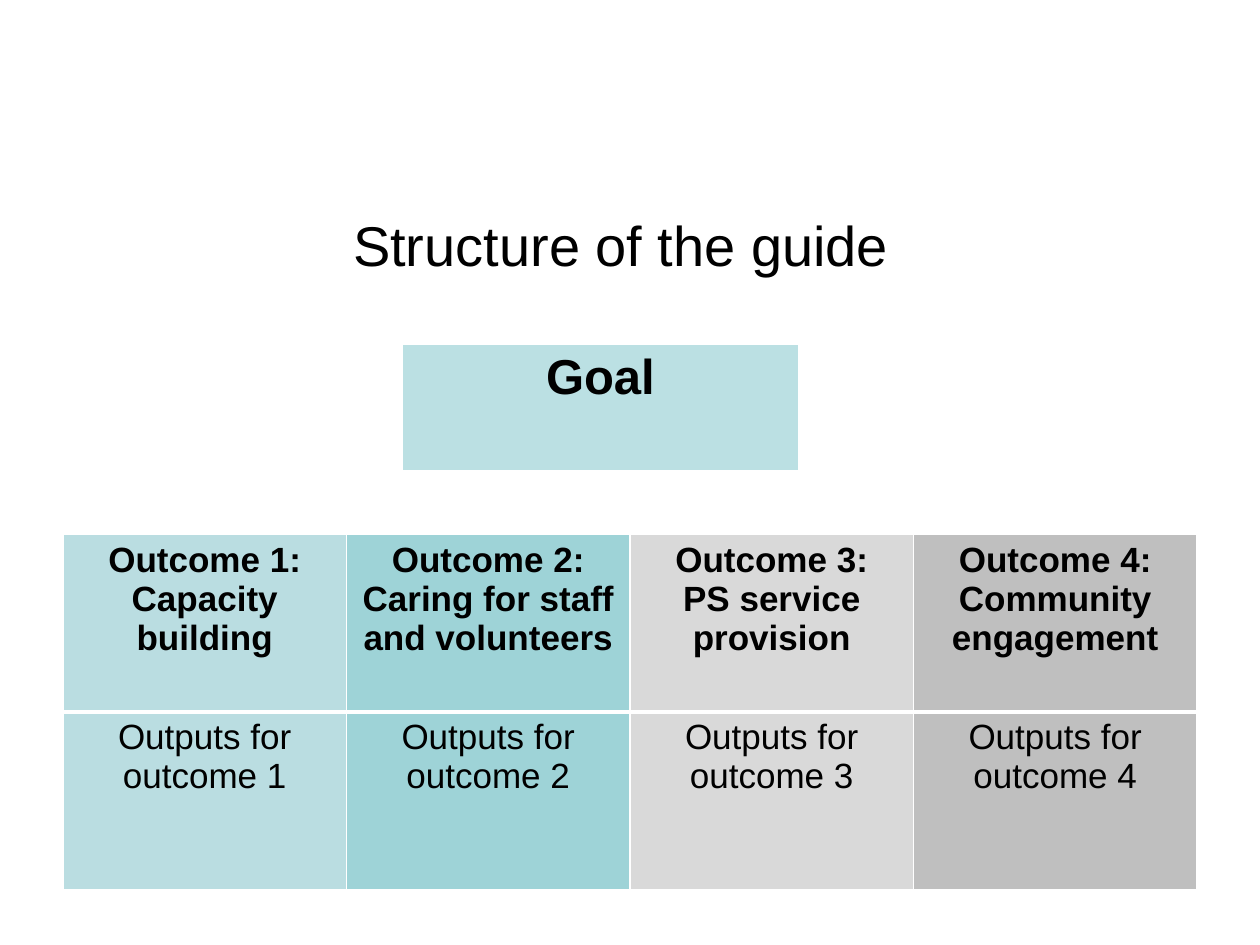
from lxml import etree
from pptx import Presentation
from pptx.dml.color import RGBColor
from pptx.enum.text import MSO_ANCHOR, PP_ALIGN
from pptx.oxml.ns import qn
from pptx.util import Inches, Pt

CENTER = PP_ALIGN.CENTER
MIDDLE = MSO_ANCHOR.MIDDLE

FONT = "Arial"
COLORS = {
    "text": "000000",
    "border": "FFFFFF",
    "goal": "BBE0E3",
    "columns": ["BADDE1", "9ED3D7", "D9D9D9", "BFBFBF"],
}

TITLE = "Structure of the guide"
GOAL = "Goal"
OUTCOMES = [
    "Outcome 1: Capacity building",
    "Outcome 2: Caring for staff and volunteers",
    "Outcome 3:\nPS service provision",
    "Outcome 4: Community engagement",
]
OUTPUTS = [f"Outputs for outcome {number}" for number in range(1, len(OUTCOMES) + 1)]

SLIDE_WIDTH, SLIDE_HEIGHT = 10, 7.5
TITLE_BOX = (0.43, 1.31, 9, 1.25)
GOAL_BOX = (3.19, 2.73, 3.15, 1.02)
OUTCOME_BOX = (0.5, 4.24, 9, 2.82)
THIN, THICK = 1, 3


def write(text_frame, text, size, bold=False):
    text_frame.text = text
    for paragraph in text_frame.paragraphs:
        paragraph.alignment = CENTER
        paragraph.font.name = FONT
        paragraph.font.size = Pt(size)
        paragraph.font.bold = bold
        paragraph.font.color.rgb = RGBColor.from_string(COLORS["text"])


def add_borders(cell, top, bottom):
    properties = cell._tc.get_or_add_tcPr()
    for side, width in (("L", THIN), ("R", THIN), ("T", top), ("B", bottom)):
        line = etree.SubElement(properties, qn(f"a:ln{side}"), w=str(Pt(width)))
        fill = etree.SubElement(line, qn("a:solidFill"))
        etree.SubElement(fill, qn("a:srgbClr"), val=COLORS["border"])


def add_grid(slide, box, rows, fills, size):
    shape = slide.shapes.add_table(len(rows), len(fills), *map(Inches, box))
    table = shape.table
    table.first_row = False
    table.horz_banding = False
    for row_index, texts in enumerate(rows):
        is_header = row_index == 0
        top, bottom = (THIN, THICK) if is_header else (THICK, THIN)
        for column_index, (text, fill) in enumerate(zip(texts, fills)):
            cell = table.cell(row_index, column_index)
            write(cell.text_frame, text, size, bold=is_header)
            add_borders(cell, top, bottom)
            cell.fill.solid()
            cell.fill.fore_color.rgb = RGBColor.from_string(fill)


def main():
    presentation = Presentation()
    presentation.slide_width = Inches(SLIDE_WIDTH)
    presentation.slide_height = Inches(SLIDE_HEIGHT)
    slide = presentation.slides.add_slide(presentation.slide_layouts[6])

    title = slide.shapes.add_textbox(*map(Inches, TITLE_BOX))
    title.text_frame.word_wrap = True
    title.text_frame.vertical_anchor = MIDDLE
    write(title.text_frame, TITLE, 32)

    add_grid(slide, OUTCOME_BOX, [OUTCOMES, OUTPUTS], COLORS["columns"], 20)
    add_grid(slide, GOAL_BOX, [[GOAL]], [COLORS["goal"]], 28)

    presentation.save("out.pptx")


if __name__ == "__main__":
    main()
